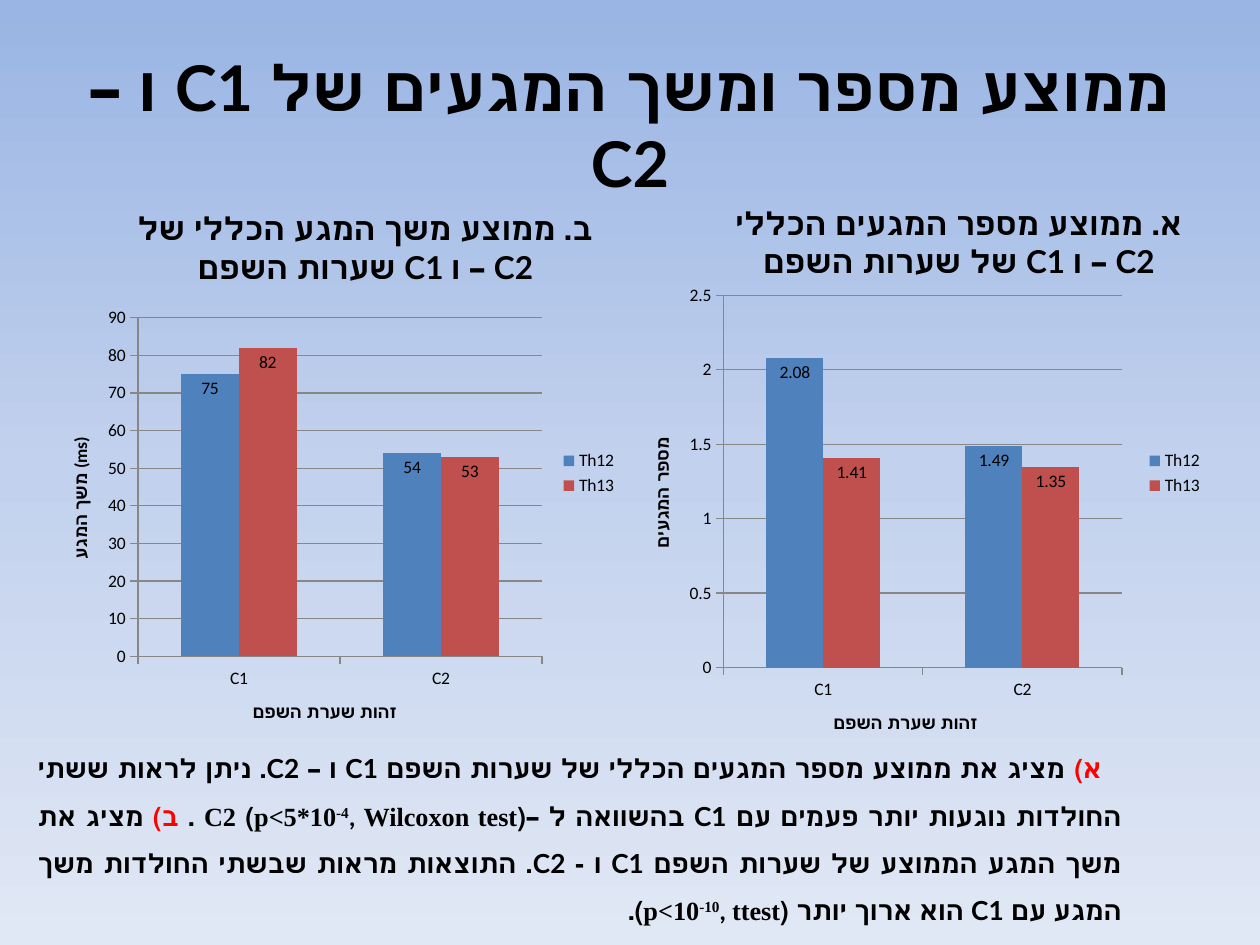
import copy

import pptx
import pptx.chart.data
import pptx.dml.color
import pptx.enum.chart
import pptx.enum.text
import pptx.oxml
import pptx.util
from pptx.util import Cm

COLORS = {
    "sky_top": "9AB5E4", "sky_middle": "C2D1ED", "sky_bottom": "E1E8F5",
    "text": "000000", "marker": "FF0000", "axis": "878787",
    "Th12": "4F81BD", "Th13": "C0504D",
}
HEBREW, LATIN, SERIF = "Lato", "Calibri", "Times New Roman"


def rgb(name):
    return pptx.dml.color.RGBColor.from_string(COLORS[name])


def style_font(font, name, size, bold=False, color="text"):
    font.name = name
    font.size = pptx.util.Pt(size)
    font.bold = bold
    font.color.rgb = rgb(color)


def paint_background(slide):
    fill = slide.background.fill
    fill.gradient()
    fill.gradient_angle = 270
    first = fill.gradient_stops[0]
    stop_list = slide.background.fill._fill._gradFill.gsLst
    stop_list.insert(1, copy.deepcopy(stop_list[0]))
    names = ("sky_top", "sky_middle", "sky_bottom")
    for stop, name, position in zip(fill.gradient_stops, names, (0, 0.5, 1)):
        stop.color.rgb = rgb(name)
        stop.position = position


def place_title(slide, box, text):
    title = slide.shapes.title
    title.left, title.top, title.width, title.height = box
    frame = title.text_frame
    frame.text = text
    frame.word_wrap = True
    frame.auto_size = pptx.enum.text.MSO_AUTO_SIZE.NONE
    frame.vertical_anchor = pptx.enum.text.MSO_ANCHOR.MIDDLE
    frame.margin_left = frame.margin_right = Cm(0.5)
    paragraph = frame.paragraphs[0]
    paragraph.alignment = pptx.enum.text.PP_ALIGN.CENTER
    paragraph._p.get_or_add_pPr().set("rtl", "1")
    style_font(paragraph.runs[0].font, HEBREW, 36, bold=True)


def set_layout(parent, index, position, inner=False):
    """Insert a manual layout; position is x, y and optionally w, h as fractions."""
    keys = ("x", "y", "w", "h")[:len(position)]
    parts = '<c:layoutTarget val="inner"/>' if inner else ""
    parts += '<c:xMode val="edge"/><c:yMode val="edge"/>'
    parts += "".join(f'<c:{key} val="{value}"/>' for key, value in zip(keys, position))
    namespace = "http://schemas.openxmlformats.org/drawingml/2006/chart"
    layout = pptx.oxml.parse_xml(
        f'<c:layout xmlns:c="{namespace}"><c:manualLayout>{parts}</c:manualLayout></c:layout>')
    for old in parent.findall(f"{{{namespace}}}layout"):
        parent.remove(old)
    parent.insert(index, layout)


def style_axis(axis, title):
    axis.has_title = True
    axis.axis_title.text_frame.text = title
    run = axis.axis_title.text_frame.paragraphs[0].runs[0]
    style_font(run.font, LATIN, 10, bold=True)
    axis.major_tick_mark = pptx.enum.chart.XL_TICK_MARK.OUTSIDE
    axis.format.line.color.rgb = rgb("axis")
    axis.format.line.width = pptx.util.Pt(0.75)


def place_chart(slide, box, title, value_title, series, scale, title_at, plot_box, overlay):
    data = pptx.chart.data.CategoryChartData()
    data.categories = ["C1", "C2"]
    for name, values in series.items():
        data.add_series(name, values)
    chart = slide.shapes.add_chart(
        pptx.enum.chart.XL_CHART_TYPE.COLUMN_CLUSTERED, *box, data).chart
    style_font(chart.font, LATIN, 10)

    # Chart title and legend
    chart.has_title = True
    chart.chart_title.text_frame.text = title
    style_font(chart.chart_title.text_frame.paragraphs[0].runs[0].font, HEBREW, 18, bold=True)
    chart.chart_title.include_in_layout = overlay
    set_layout(chart.chart_title._element, 1, title_at)
    chart.has_legend = True
    chart.legend.position = pptx.enum.chart.XL_LEGEND_POSITION.RIGHT
    chart.legend.include_in_layout = False

    # Axes
    style_axis(chart.category_axis, "זהות שערת השפם")
    style_axis(chart.value_axis, value_title)
    chart.value_axis.minimum_scale = 0
    chart.value_axis.maximum_scale, chart.value_axis.major_unit = scale
    grid_line = chart.value_axis.major_gridlines.format.line
    grid_line.color.rgb = rgb("axis")
    grid_line.width = pptx.util.Pt(0.75)

    # Columns
    plot = chart.plots[0]
    plot.gap_width = 150
    plot.overlap = 0
    plot.vary_by_categories = False
    for column in plot.series:
        column.format.fill.solid()
        column.format.fill.fore_color.rgb = rgb(column.name)
        labels = column.data_labels
        labels.show_value = True
        labels.position = pptx.enum.chart.XL_LABEL_POSITION.INSIDE_END
        style_font(labels.font, LATIN, 10)
    set_layout(chart._chartSpace.chart.plotArea, 0, plot_box, inner=True)


def place_caption(slide, box, pieces):
    frame = slide.shapes.add_textbox(*box).text_frame
    frame.word_wrap = True
    paragraph = frame.paragraphs[0]
    paragraph.alignment = pptx.enum.text.PP_ALIGN.JUSTIFY
    paragraph.line_spacing = 1.5
    properties = paragraph._p.get_or_add_pPr()
    for key, value in (("rtl", 1), ("marL", Cm(2.06)), ("indent", Cm(0.4))):
        properties.set(key, str(int(value)))
    for text, font_name, color, superscript in pieces:
        run = paragraph.add_run()
        run.text = text
        style_font(run.font, font_name, 15, bold=True, color=color)
        if superscript:
            run.font._element.set("baseline", "30000")


def main():
    presentation = pptx.Presentation()
    presentation.slide_width, presentation.slide_height = Cm(25.4), Cm(19.05)
    slide = presentation.slides.add_slide(presentation.slide_layouts[5])
    paint_background(slide)
    place_title(slide, (Cm(1.27), Cm(0.91), Cm(22.86), Cm(3.18)),
                "ממוצע מספר ומשך המגעים של C1 ו – C2")

    # Two charts of equal size, side by side
    top, width, height = Cm(3.94), Cm(11.81), Cm(11.2)
    place_chart(slide, (Cm(12.7), top, width, height),
                "א. ממוצע מספר המגעים הכללי של שערות השפם C1 ו – C2", "מספר המגעים",
                {"Th12": (2.08, 1.49), "Th13": (1.41, 1.35)}, (2.5, 0.5),
                (0.17, 0.01), (0.16, 0.18, 0.68, 0.67), True)
    place_chart(slide, (Cm(0.89), top, width, height),
                "ב. ממוצע משך המגע הכללי של שערות השפם C1 ו – C2", "משך המגע (ms)",
                {"Th12": (75, 54), "Th13": (82, 53)}, (90, 10),
                (0.15, 0.02), (0.16, 0.22, 0.69, 0.61), False)

    # Caption under the charts
    place_caption(slide, (Cm(0.51), Cm(14.73), Cm(24.41), Cm(4.1)), [
        ("א) ", HEBREW, "marker", False),
        ("מציג את ממוצע מספר המגעים הכללי של שערות השפם C1 ו – C2. ניתן לראות ששתי "
         "החולדות נוגעות יותר פעמים עם C1 בהשוואה ל –(", HEBREW, "text", False),
        ("p<5*10", SERIF, "text", False),
        ("-4", SERIF, "text", True),
        (", ", LATIN, "text", False),
        ("Wilcoxon test) C2 . ", SERIF, "text", False),
        ("ב) ", HEBREW, "marker", False),
        ("מציג את משך המגע הממוצע של שערות השפם C1 ו - C2. התוצאות מראות שבשתי "
         "החולדות משך המגע עם C1 הוא ארוך יותר ", HEBREW, "text", False),
        ("(", LATIN, "text", False),
        ("p<10", SERIF, "text", False),
        ("-10", SERIF, "text", True),
        (", ", LATIN, "text", False),
        ("ttest", SERIF, "text", False),
        (").", LATIN, "text", False),
    ])
    presentation.save("out.pptx")


if __name__ == "__main__":
    main()
